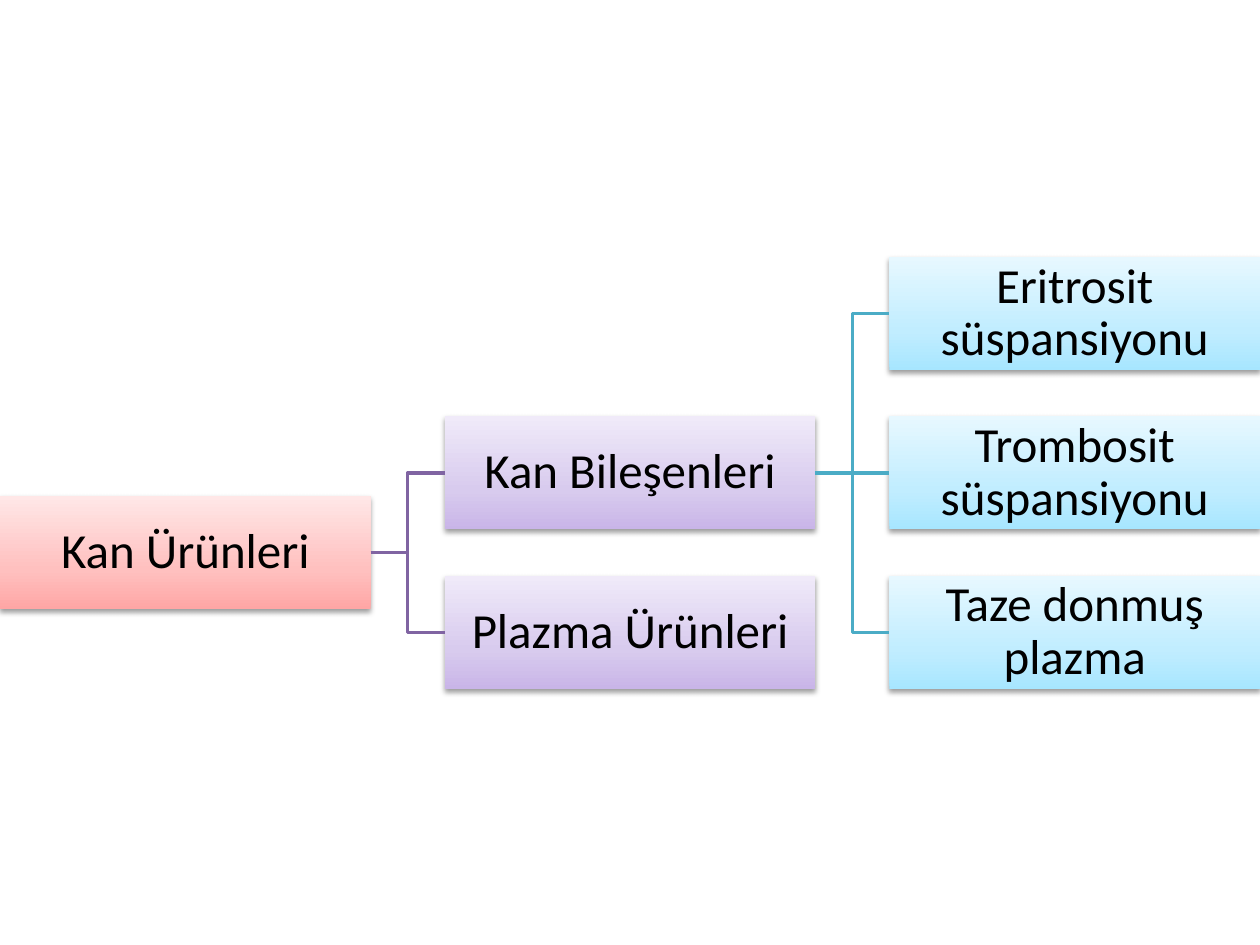
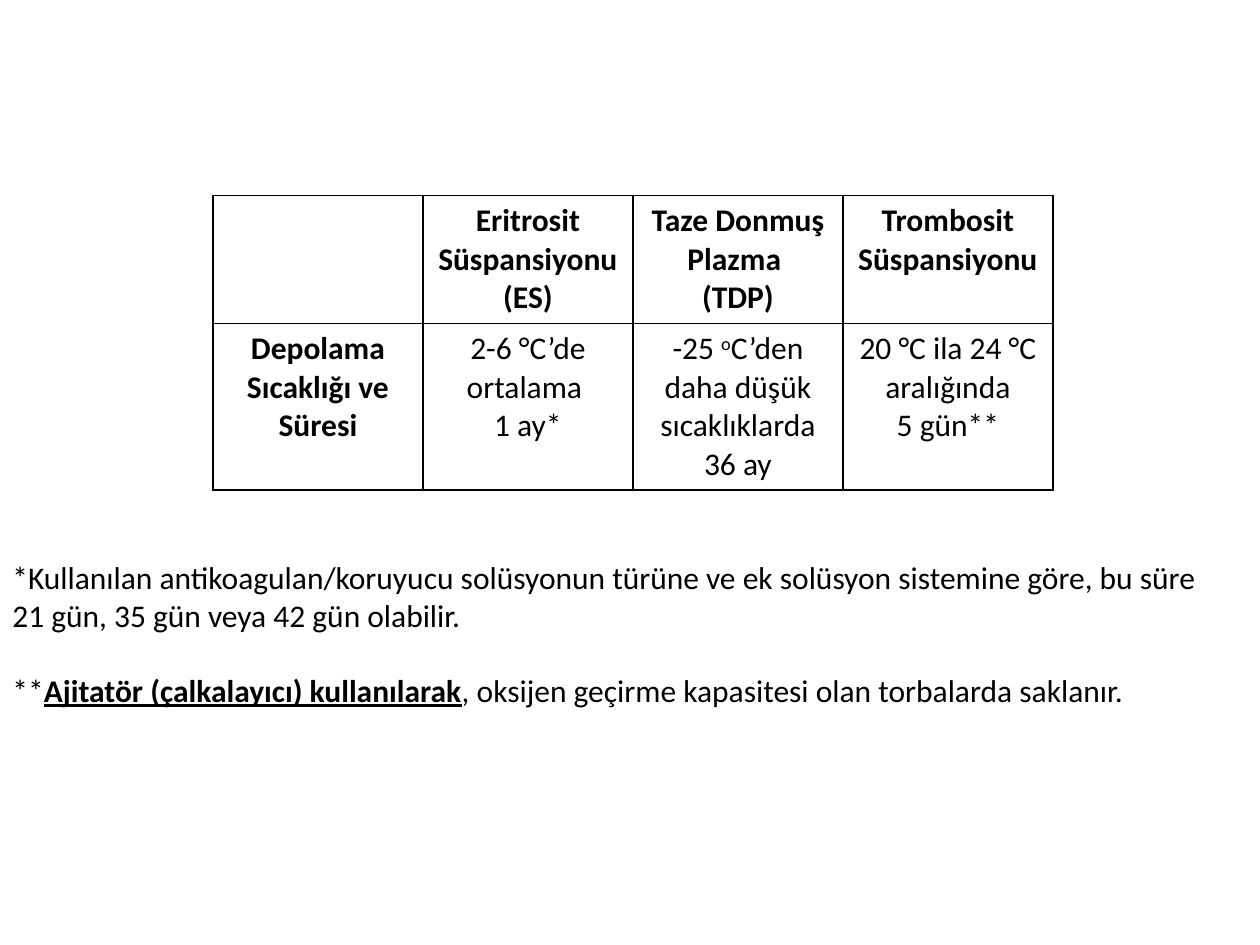
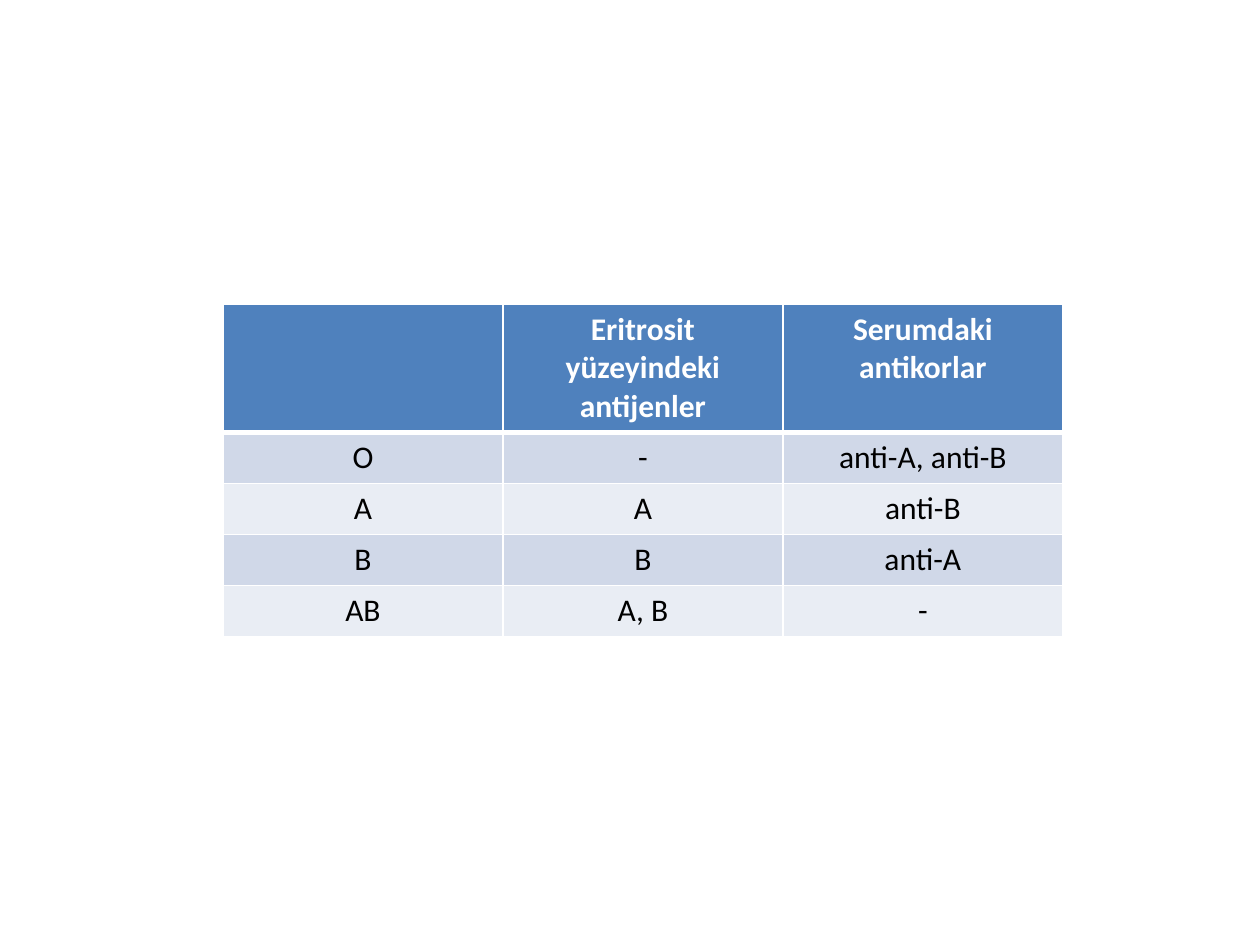
from dataclasses import dataclass
from typing import NamedTuple

from lxml.etree import SubElement
from pptx import Presentation
from pptx.dml.color import RGBColor
from pptx.enum.shapes import MSO_CONNECTOR as Connector, MSO_SHAPE as Preset
from pptx.enum.text import MSO_ANCHOR as Anchor, MSO_AUTO_SIZE as AutoSize, PP_ALIGN as Align
from pptx.oxml.ns import qn
from pptx.util import Pt

FONT = "Calibri"
BLACK = RGBColor(0x00, 0x00, 0x00)
WHITE = RGBColor(0xFF, 0xFF, 0xFF)
HEADER_BLUE = RGBColor(0x4F, 0x81, 0xBD)
BAND_DARK = RGBColor(0xD0, 0xD8, 0xE8)
BAND_LIGHT = RGBColor(0xE9, 0xED, 0xF4)
PURPLE = RGBColor(0x80, 0x64, 0xA2)
TEAL = RGBColor(0x4B, 0xAC, 0xC6)
PINK_SHADES = (RGBColor(0xFF, 0xA6, 0xA5), RGBColor(0xFF, 0xC0, 0xBF), RGBColor(0xFF, 0xE7, 0xE7))
PURPLE_SHADES = (RGBColor(0xC9, 0xB5, 0xE8), RGBColor(0xD8, 0xCB, 0xEE), RGBColor(0xF0, 0xEA, 0xF9))
TEAL_SHADES = (RGBColor(0xA7, 0xE6, 0xFF), RGBColor(0xC1, 0xED, 0xFF), RGBColor(0xE7, 0xF8, 0xFF))
SHADE_STOPS = (0, 35, 100)

SLIDE_WIDTH, SLIDE_HEIGHT = 720, 540
NODE_WIDTH = SLIDE_WIDTH / 3.4
NODE_HEIGHT = 64.6
COLUMN_PITCH = NODE_WIDTH * 1.2
ROW_PITCH = 91.1
TREE_TOP = 146.9
TABLE_WIDTH = 480
LINE_HEIGHT = 22
CELL_PADDING = 7.2


class Run(NamedTuple):
    text: str
    bold: bool = False
    underline: bool = False
    superscript: bool = False


@dataclass(frozen=True)
class Node:
    label: str
    column: int
    row: float
    shades: tuple[RGBColor, ...]
    parent: str = ""
    line: RGBColor = PURPLE


@dataclass(frozen=True)
class TableStyle:
    border: RGBColor
    header_rule: float
    header_text: RGBColor
    header_fill: RGBColor | None = None
    bands: tuple[RGBColor, ...] = ()
    bold_first_column: bool = False


NODES = (
    Node("Kan Ürünleri", 0, 1.5, PINK_SHADES),
    Node("Kan Bileşenleri", 1, 1, PURPLE_SHADES, "Kan Ürünleri"),
    Node("Plazma Ürünleri", 1, 2, PURPLE_SHADES, "Kan Ürünleri"),
    Node("Eritrosit süspansiyonu", 2, 0, TEAL_SHADES, "Kan Bileşenleri", TEAL),
    Node("Trombosit süspansiyonu", 2, 1, TEAL_SHADES, "Kan Bileşenleri", TEAL),
    Node("Taze donmuş plazma", 2, 2, TEAL_SHADES, "Kan Bileşenleri", TEAL),
)

STORAGE_ROWS = (
    ("", "Eritrosit Süspansiyonu (ES)", ("Taze Donmuş Plazma ", "(TDP)"), "Trombosit Süspansiyonu"),
    (
        "Depolama Sıcaklığı ve Süresi",
        ("2-6 °C’de ortalama ", "1 ay*"),
        ((Run("-25 "), Run("o", superscript=True), Run("C’den daha düşük sıcaklıklarda 36 ay")),),
        ("20 °C ila 24 °C aralığında", "5 gün**"),
    ),
)
STORAGE_NOTES = (
    "*Kullanılan antikoagulan/koruyucu solüsyonun türüne ve ek solüsyon sistemine göre, bu süre",
    "21 gün, 35 gün veya 42 gün olabilir.",
    (
        Run("**"),
        Run("Ajitatör (çalkalayıcı) kullanılarak", bold=True, underline=True),
        Run(", oksijen geçirme kapasitesi olan torbalarda saklanır."),
    ),
)
BLOOD_GROUP_ROWS = (
    ("", "Eritrosit yüzeyindeki antijenler", "Serumdaki antikorlar"),
    ("O", "-", "anti-A, anti-B"),
    ("A", "A", "anti-B"),
    ("B", "B", "anti-A"),
    ("AB", "A, B", "-"),
)
PLAIN_GRID = TableStyle(BLACK, 1, BLACK, bold_first_column=True)
BANDED_GRID = TableStyle(WHITE, 3, WHITE, HEADER_BLUE, (BAND_DARK, BAND_LIGHT))


def write_text(frame, content, *, size: float = 18, color: RGBColor = BLACK, bold: bool = False,
               align=Align.CENTER, line_spacing: float | None = None) -> None:
    lines = (content,) if isinstance(content, str) else content
    for index, line in enumerate(lines):
        paragraph = frame.add_paragraph() if index else frame.paragraphs[0]
        paragraph.alignment = align
        paragraph.line_spacing = line_spacing
        paragraph.font.size = Pt(size)
        for part in (Run(line),) if isinstance(line, str) else line:
            if not part.text:
                continue
            run = paragraph.add_run()
            run.text = part.text
            font = run.font
            font.name, font.size = FONT, Pt(size)
            font.bold = bold or part.bold
            font.underline = part.underline
            font.color.rgb = color
            if part.superscript:
                run._r.get_or_add_rPr().set("baseline", "30000")


def add_color(parent, color: RGBColor):
    return SubElement(parent, qn("a:srgbClr"), val=str(color))


def shade(shape, shades: tuple[RGBColor, ...]) -> None:
    shape.fill.gradient()
    shape.fill.gradient_angle = 90
    stops = shape._element.spPr.find(f".//{qn('a:gsLst')}")
    for stop in list(stops):
        stops.remove(stop)
    for position, color in zip(SHADE_STOPS, shades):
        add_color(SubElement(stops, qn("a:gs"), pos=str(position * 1000)), color)


def cast_shadow(shape) -> None:
    shape.shadow.inherit = False
    effects = shape._element.spPr.find(qn("a:effectLst"))
    shadow = SubElement(effects, qn("a:outerShdw"), blurRad=str(Pt(3.1)), dist=str(Pt(1.6)),
                        dir="5400000", rotWithShape="0")
    SubElement(add_color(shadow, BLACK), qn("a:alpha"), val="38000")


def add_node(slide, node: Node):
    shape = slide.shapes.add_shape(
        Preset.RECTANGLE, Pt(node.column * COLUMN_PITCH), Pt(TREE_TOP + node.row * ROW_PITCH),
        Pt(NODE_WIDTH), Pt(NODE_HEIGHT))
    shade(shape, node.shades)
    shape.line.fill.background()
    cast_shadow(shape)
    frame = shape.text_frame
    frame.word_wrap = True
    frame.vertical_anchor = Anchor.MIDDLE
    frame.margin_left = frame.margin_right = frame.margin_top = frame.margin_bottom = Pt(1.4)
    write_text(frame, node.label, size=28, line_spacing=0.9)
    return shape


def join_nodes(slide, parent, child, color: RGBColor) -> None:
    kind = Connector.STRAIGHT if parent.top == child.top else Connector.ELBOW
    connector = slide.shapes.add_connector(kind, 0, 0, 0, 0)
    connector.begin_connect(parent, 3)
    connector.end_connect(child, 1)
    connector.line.color.rgb = color
    connector.line.width = Pt(2)
    SubElement(connector._element.spPr, qn("a:effectLst"))


def set_borders(cell, color: RGBColor, *, top: float = 1, bottom: float = 1) -> None:
    properties = cell._tc.get_or_add_tcPr()
    for side, width in (("L", 1), ("R", 1), ("T", top), ("B", bottom)):
        line = SubElement(properties, qn(f"a:ln{side}"), w=str(Pt(width)))
        add_color(SubElement(line, qn("a:solidFill")), color)


def add_grid(slide, rows, style: TableStyle, *, left: float, top: float, line_counts: tuple[int, ...]) -> None:
    heights = [count * LINE_HEIGHT + CELL_PADDING for count in line_counts]
    table = slide.shapes.add_table(
        len(rows), len(rows[0]), Pt(left), Pt(top), Pt(TABLE_WIDTH), Pt(sum(heights))).table
    table.first_row = table.horz_banding = False
    for row_index, row in enumerate(rows):
        table.rows[row_index].height = Pt(heights[row_index])
        is_header = row_index == 0
        fill = style.header_fill
        if not is_header:
            fill = style.bands[(row_index - 1) % len(style.bands)] if style.bands else None
        for column_index, content in enumerate(row):
            cell = table.cell(row_index, column_index)
            set_borders(cell, style.border,
                        top=style.header_rule if row_index == 1 else 1,
                        bottom=style.header_rule if is_header else 1)
            if fill is None:
                cell.fill.background()
            else:
                cell.fill.solid()
                cell.fill.fore_color.rgb = fill
            write_text(cell.text_frame, content,
                       color=style.header_text if is_header else BLACK,
                       bold=is_header or (style.bold_first_column and column_index == 0))


def build_product_tree(slide) -> None:
    shapes = {node.label: add_node(slide, node) for node in NODES}
    for node in NODES:
        if node.parent:
            join_nodes(slide, shapes[node.parent], shapes[node.label], node.line)


def build_storage(slide) -> None:
    add_grid(slide, STORAGE_ROWS, PLAIN_GRID, left=121.7, top=111.6, line_counts=(3, 4))
    frame = slide.shapes.add_textbox(Pt(0), Pt(315.4), Pt(705.6), Pt(94.3)).text_frame
    frame.word_wrap = True
    frame.auto_size = AutoSize.SHAPE_TO_FIT_TEXT
    write_text(frame, STORAGE_NOTES, align=Align.LEFT)
    frame.paragraphs[-1].space_before = Pt(21)


def build_blood_groups(slide) -> None:
    add_grid(slide, BLOOD_GROUP_ROWS, BANDED_GRID, left=127.4, top=173.8, line_counts=(3, 1, 1, 1, 1))


def main() -> None:
    presentation = Presentation()
    presentation.slide_width, presentation.slide_height = Pt(SLIDE_WIDTH), Pt(SLIDE_HEIGHT)
    blank_layout = presentation.slide_layouts[6]
    for build in (build_product_tree, build_storage, build_blood_groups):
        build(presentation.slides.add_slide(blank_layout))
    presentation.save("out.pptx")


if __name__ == "__main__":
    main()
